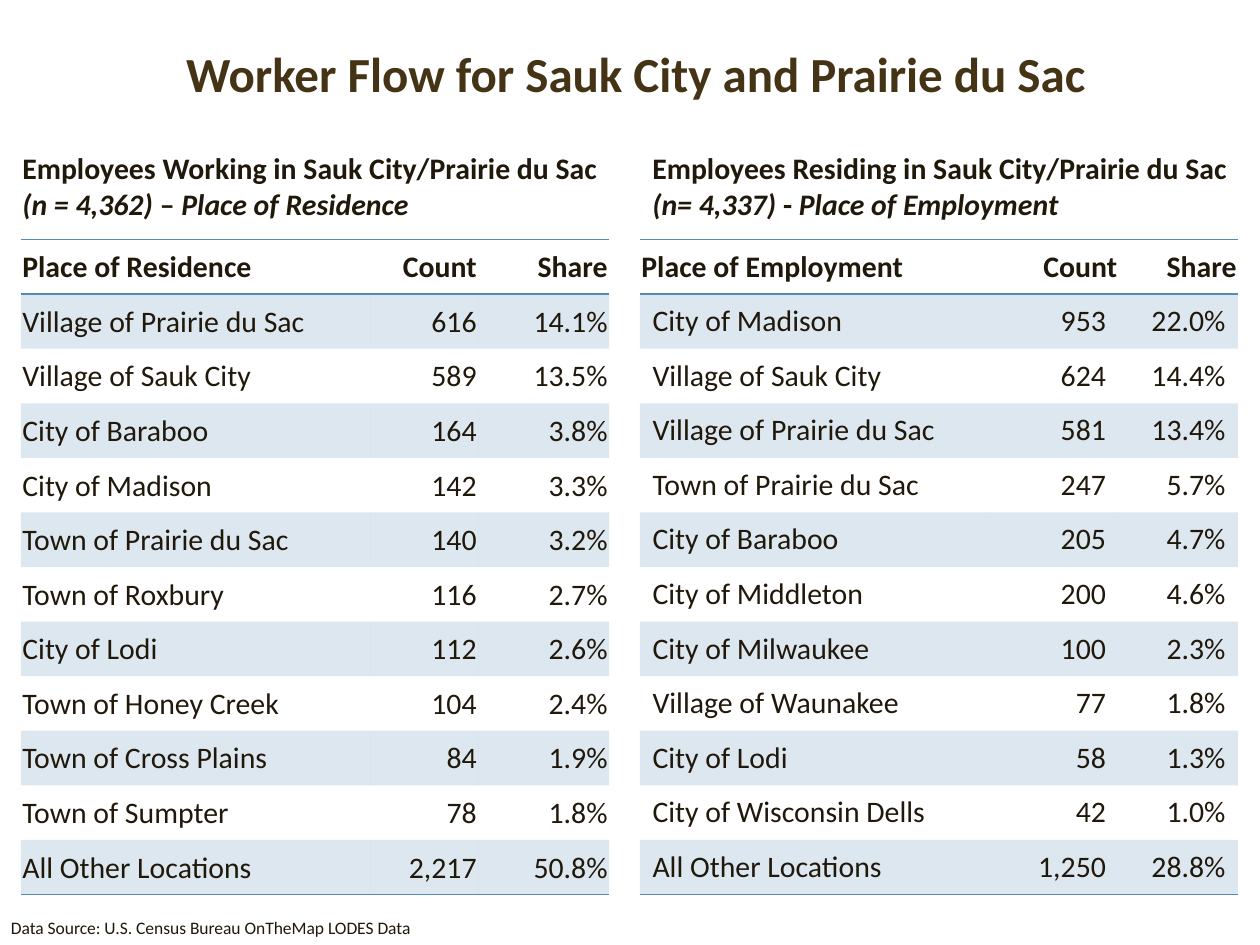
import pptx
import pptx.dml.color
import pptx.enum.text
import pptx.oxml
import pptx.oxml.ns
import pptx.util
from pptx.util import Cm

BLUE, DARK, BROWN = "548BB7", "20180A", "443315"
NO_STYLE = "{2D5ABB26-0587-4C30-8999-92F81FD0307C}"
ALIGN = pptx.enum.text.PP_ALIGN
MIDDLE = pptx.enum.text.MSO_ANCHOR.MIDDLE


def color(value):
    return pptx.dml.color.RGBColor.from_string(value)


def set_font(paragraph, size, bold=False, ink=DARK):
    font = paragraph.font
    font.name = "Calibri"
    font.size = pptx.util.Pt(size)
    font.bold = bold
    font.color.rgb = color(ink)


flows = [
    {
        "heading": "Employees Working in Sauk City/Prairie du Sac",
        "subheading": ["(n = 4,362) ", "– ", "Place of Residence"],
        "heading_at": (0.2, 12.75),
        "left": 0.42,
        "widths": [7.04, 2.18, 2.64],
        "tight_body": True,
        "rows": [
            ("Place of Residence", "Count", "Share"),
            ("Village of Prairie du Sac", "616", "14.1%"),
            ("Village of Sauk City", "589", "13.5%"),
            ("City of Baraboo", "164", "3.8%"),
            ("City of Madison", "142", "3.3%"),
            ("Town of Prairie du Sac", "140", "3.2%"),
            ("Town of Roxbury", "116", "2.7%"),
            ("City of Lodi", "112", "2.6%"),
            ("Town of Honey Creek", "104", "2.4%"),
            ("Town of Cross Plains", "84", "1.9%"),
            ("Town of Sumpter", "78", "1.8%"),
            ("All Other Locations", "2,217", "50.8%"),
        ],
    },
    {
        "heading": "Employees Residing in Sauk City/Prairie du Sac",
        "subheading": ["(n= 4,337) ", "- ", "Place of Employment"],
        "heading_at": (12.9, 12.5),
        "left": 12.9,
        "widths": [7.01, 2.64, 2.41],
        "tight_body": False,
        "rows": [
            ("Place of Employment", "Count", "Share"),
            ("City of Madison", "953", "22.0%"),
            ("Village of Sauk City", "624", "14.4%"),
            ("Village of Prairie du Sac", "581", "13.4%"),
            ("Town of Prairie du Sac", "247", "5.7%"),
            ("City of Baraboo", "205", "4.7%"),
            ("City of Middleton", "200", "4.6%"),
            ("City of Milwaukee", "100", "2.3%"),
            ("Village of Waunakee", "77", "1.8%"),
            ("City of Lodi", "58", "1.3%"),
            ("City of Wisconsin Dells", "42", "1.0%"),
            ("All Other Locations", "1,250", "28.8%"),
        ],
    },
]

deck = pptx.Presentation()
deck.slide_width, deck.slide_height = Cm(25.4), Cm(19.05)
slide = deck.slides.add_slide(deck.slide_layouts[6])

title = slide.shapes.add_textbox(Cm(1.27), Cm(0.3), Cm(23.09), Cm(2.34)).text_frame
title.word_wrap = True
title.vertical_anchor = MIDDLE
title.text = "Worker Flow for Sauk City and Prairie du Sac"
title.paragraphs[0].alignment = ALIGN.CENTER
set_font(title.paragraphs[0], 28, bold=True, ink=BROWN)

row_height = 1.1
for flow in flows:
    rows, widths = flow["rows"], flow["widths"]
    table = slide.shapes.add_table(
        len(rows), len(widths), Cm(flow["left"]), Cm(4.83),
        Cm(sum(widths)), Cm(row_height * len(rows))).table
    table.first_row = table.horz_banding = False
    table._tbl.tblPr.find(pptx.oxml.ns.qn("a:tableStyleId")).text = NO_STYLE
    for column, width in zip(table.columns, widths):
        column.width = Cm(width)

    for r, row in enumerate(rows):
        table.rows[r].height = Cm(row_height)
        is_header = r == 0
        ruled_sides = "TB" if is_header else "B" if r == len(rows) - 1 else ""
        for c, value in enumerate(row):
            cell = table.cell(r, c)
            cell.text = value
            cell.vertical_anchor = MIDDLE
            if is_header or flow["tight_body"]:
                cell.margin_left = cell.margin_top = cell.margin_right = Cm(0.03)
                cell.margin_bottom = 0
            label = cell.text_frame.paragraphs[0]
            label.alignment = ALIGN.RIGHT if c else ALIGN.LEFT
            set_font(label, 17, bold=is_header)

            properties = cell._tc.get_or_add_tcPr()
            for side in ruled_sides:
                properties.append(pptx.oxml.parse_xml(
                    f'<a:ln{side} {pptx.oxml.ns.nsdecls("a")} w="12700"><a:solidFill>'
                    f'<a:srgbClr val="{BLUE}"/></a:solidFill></a:ln{side}>'))
            if r % 2:
                cell.fill.solid()
                cell.fill.fore_color.rgb = color(BLUE)
                tint = properties.find(pptx.oxml.ns.qn("a:solidFill"))[0]
                tint.append(pptx.oxml.parse_xml(
                    f'<a:alpha {pptx.oxml.ns.nsdecls("a")} val="20000"/>'))
            else:
                cell.fill.background()

    left, width = flow["heading_at"]
    heading = slide.shapes.add_textbox(Cm(left), Cm(2.9), Cm(width), Cm(1.7)).text_frame
    heading.word_wrap = True
    heading.text = flow["heading"]
    subheading = heading.add_paragraph()
    for i, part in enumerate(flow["subheading"]):
        run = subheading.add_run()
        run.text = part
        run.font.italic = i != 1
    for paragraph in heading.paragraphs:
        set_font(paragraph, 17, bold=True)

source = slide.shapes.add_textbox(Cm(-0.03), Cm(18.36), Cm(12.98), Cm(0.69)).text_frame
source.word_wrap = True
source.text = "Data Source: U.S. Census Bureau OnTheMap LODES Data"
set_font(source.paragraphs[0], 10)

deck.save("out.pptx")
